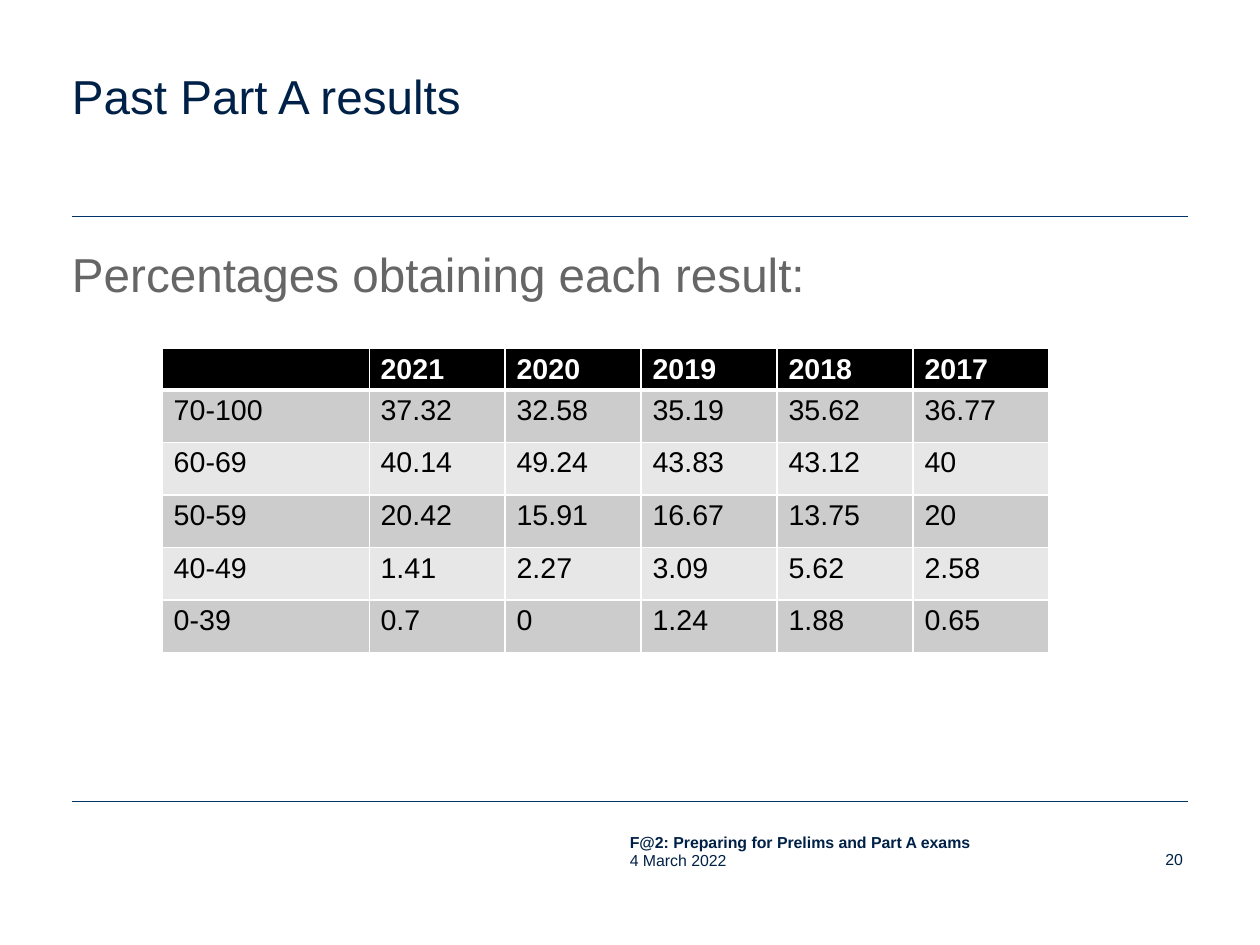
from dataclasses import dataclass
from typing import Any

from lxml import etree
from pptx import Presentation
from pptx.dml.color import RGBColor
from pptx.enum.shapes import MSO_CONNECTOR
from pptx.enum.text import MSO_ANCHOR, MSO_AUTO_SIZE, PP_ALIGN
from pptx.oxml.ns import qn
from pptx.util import Inches, Pt

LEFT, RIGHT = PP_ALIGN.LEFT, PP_ALIGN.RIGHT
TOP = MSO_ANCHOR.TOP
FIXED = MSO_AUTO_SIZE.NONE
STRAIGHT = MSO_CONNECTOR.STRAIGHT


@dataclass(frozen=True)
class Theme:
    face: str = "Arial"
    navy: str = "002147"
    rule: str = "003366"
    gray: str = "666666"
    white: str = "FFFFFF"
    black: str = "000000"
    bands: tuple[str, str] = ("CCCCCC", "E7E7E7")
    head: float = 30
    cell: float = 18
    foot: float = 10
    lead: float = 0.93


THEME = Theme()


@dataclass(frozen=True)
class Line:
    text: str
    size: float
    color: str
    bold: bool = False
    align: PP_ALIGN = LEFT
    lead: float = THEME.lead
    after: float = 0


@dataclass(frozen=True)
class Box:
    left: float
    top: float
    width: float
    height: float
    inset: float
    lines: tuple[Line, ...]


TITLE = Box(0.63, 0.63, 8.15, 1.1, 0,
            (Line("Past Part A results", THEME.head, THEME.navy),))
BODY = Box(0.63, 2.16, 9.76, 4.56, 0.03,
           (Line("Percentages obtaining each result:", THEME.head,
                 THEME.gray, after=14.1),))
FOOT = Box(5.51, 7.29, 3.39, 0.41, 0.01,
           (Line("F@2: Preparing for Prelims and Part A exams", THEME.foot,
                 THEME.navy, bold=True),
            Line("4 March 2022", THEME.foot, THEME.navy)))
PAGE = Box(9.65, 7.43, 0.7, 0.43, 0,
           (Line("20", THEME.foot, THEME.navy, align=RIGHT, lead=1),))
RULES = (1.89, 7.01)
RESULTS = (
    ("", "2021", "2020", "2019", "2018", "2017"),
    ("70-100", "37.32", "32.58", "35.19", "35.62", "36.77"),
    ("60-69", "40.14", "49.24", "43.83", "43.12", "40"),
    ("50-59", "20.42", "15.91", "16.67", "13.75", "20"),
    ("40-49", "1.41", "2.27", "3.09", "5.62", "2.58"),
    ("0-39", "0.7", "0", "1.24", "1.88", "0.65"),
)


def apply(item: Any, values: dict[str, Any]) -> None:
    for name, value in values.items():
        setattr(item, name, value)


def write(para: Any, line: Line) -> None:
    apply(para, {"alignment": line.align, "line_spacing": line.lead,
                 "space_before": Pt(0), "space_after": Pt(line.after)})
    if not line.text:
        etree.SubElement(para._p, qn("a:endParaRPr"), sz="1000")
        return
    run = para.add_run()
    run.text = line.text
    apply(run.font, {"name": THEME.face, "size": Pt(line.size),
                     "bold": line.bold})
    run.font.color.rgb = RGBColor.from_string(line.color)


def fill_box(shape: Any, box: Box) -> None:
    apply(shape, {"left": Inches(box.left), "top": Inches(box.top),
                  "width": Inches(box.width), "height": Inches(box.height)})
    frame = shape.text_frame
    apply(frame, {"word_wrap": True, "auto_size": FIXED,
                  "vertical_anchor": TOP, "margin_left": 0,
                  "margin_right": 0, "margin_top": Inches(box.inset),
                  "margin_bottom": 0})
    for i, line in enumerate(box.lines):
        para = frame.add_paragraph() if i else frame.paragraphs[0]
        write(para, line)


def plain(para: Any) -> None:
    props = para._p.get_or_add_pPr()
    props.set("marL", "0")
    props.set("indent", "0")
    etree.SubElement(props, qn("a:buNone"))


def add_rule(slide: Any, top: float) -> None:
    rule = slide.shapes.add_connector(
        STRAIGHT, Inches(0.63), Inches(top), Inches(10.39), Inches(top))
    rule.line.color.rgb = RGBColor.from_string(THEME.rule)
    rule.line.width = Pt(0.5)
    etree.SubElement(rule._element.spPr, qn("a:effectLst"))


def edge(cell: Any, side: str, width: float) -> None:
    props = cell._tc.get_or_add_tcPr()
    line = etree.SubElement(props, qn(f"a:ln{side}"), w=str(Pt(width)))
    fill = etree.SubElement(line, qn("a:solidFill"))
    etree.SubElement(fill, qn("a:srgbClr"), val=THEME.white)


def add_results(slide: Any) -> None:
    table = slide.shapes.add_table(
        len(RESULTS), len(RESULTS[0]), Inches(1.42), Inches(3.05),
        Inches(7.77), Inches(2.64)).table
    for i, col in enumerate(table.columns):
        col.width = Inches(1.19 if i else 1.81)
    for i, row in enumerate(table.rows):
        row.height = Inches(0.46 if i else 0.34)
        color = THEME.black if i else THEME.white
        back = THEME.bands[(i - 1) % 2] if i else THEME.black
        for cell, text in zip(row.cells, RESULTS[i]):
            for side in "LRTB":
                thick = (i, side) in ((0, "B"), (1, "T"))
                edge(cell, side, 3 if thick else 1)
            apply(cell, {"margin_top": Inches(0.06),
                         "margin_bottom": Inches(0.04)})
            cell.fill.solid()
            cell.fill.fore_color.rgb = RGBColor.from_string(back)
            write(cell.text_frame.paragraphs[0],
                  Line(text, THEME.cell, color, bold=i == 0))


def main() -> None:
    deck = Presentation()
    deck.slide_width = Inches(28 / 2.54)
    deck.slide_height = Inches(21 / 2.54)
    slide = deck.slides.add_slide(deck.slide_layouts[1])
    for top in RULES:
        add_rule(slide, top)
    fill_box(slide.shapes.title, TITLE)
    body = slide.placeholders[1]
    fill_box(body, BODY)
    plain(body.text_frame.paragraphs[0])
    for box in (FOOT, PAGE):
        fill_box(slide.shapes.add_textbox(0, 0, 0, 0), box)
    add_results(slide)
    deck.save("out.pptx")


if __name__ == "__main__":
    main()
